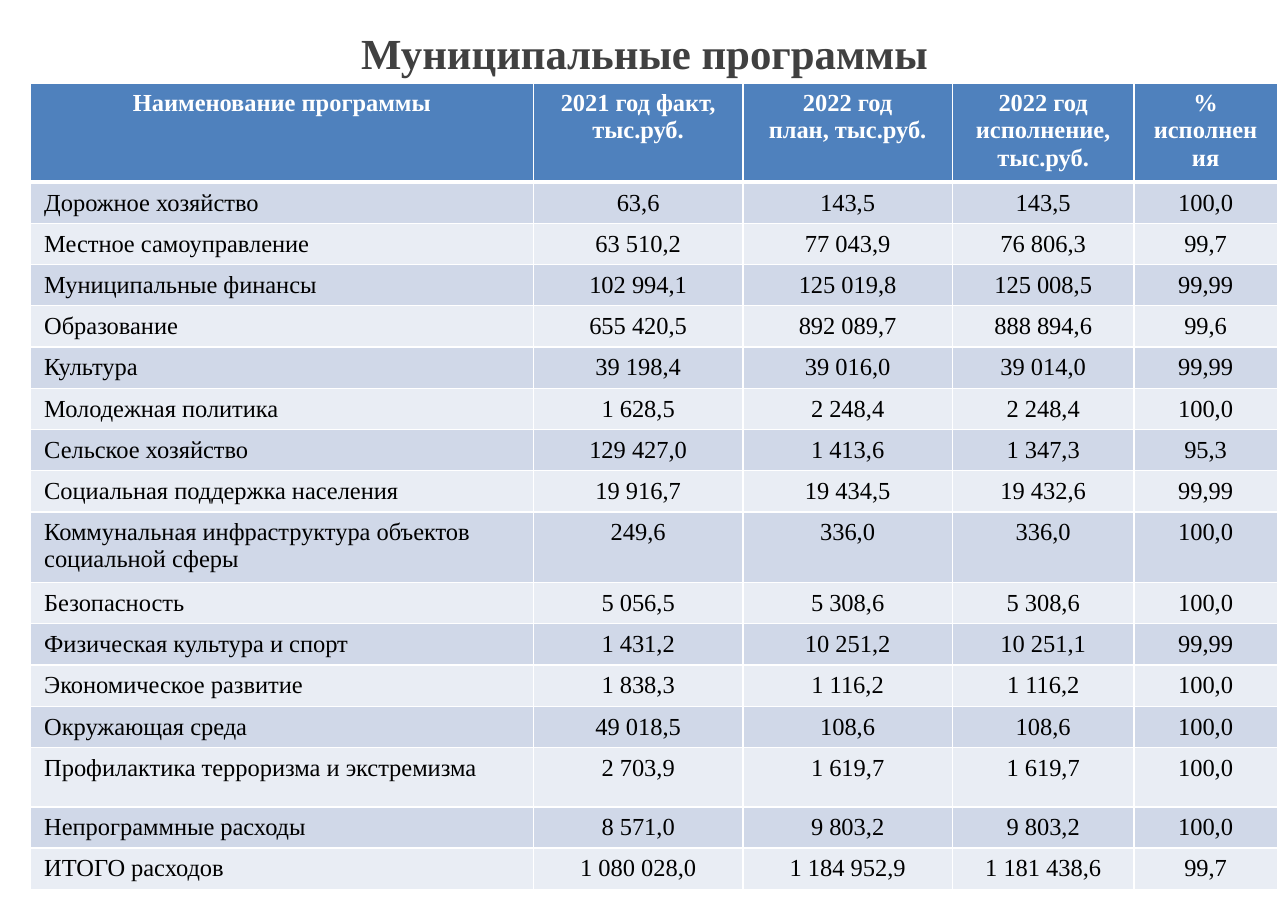
from pptx import Presentation
from pptx.dml.color import RGBColor
from pptx.enum.text import MSO_ANCHOR, PP_ALIGN
from pptx.oxml import parse_xml
from pptx.oxml.ns import nsdecls
from pptx.util import Cm, Pt

HUES = {
    "title": "404040",
    "head": "4F81BD",
    "odd": "D0D8E8",
    "even": "E9EDF4",
    "line": "FFFFFF",
    "light": "FFFFFF",
    "dark": "000000",
}
FONT = "Times New Roman"
WIDTHS = [11.6, 4.83, 4.83, 4.19, 3.3]
TALL = {0: 2.29, 9: 1.63, 14: 1.37}
ROWS = [
    ["Наименование программы", "2021 год факт, тыс.руб.", "2022 год\nплан, тыс.руб.",
     "2022 год\nисполнение, тыс.руб.", "% исполнения"],
    ["Дорожное хозяйство", "63,6", "143,5", "143,5", "100,0"],
    ["Местное самоуправление", "63 510,2", "77 043,9", "76 806,3", "99,7"],
    ["Муниципальные финансы", "102 994,1", "125 019,8", "125 008,5", "99,99"],
    ["Образование", "655 420,5", "892 089,7", "888 894,6", "99,6"],
    ["Культура", "39 198,4", "39 016,0", "39 014,0", "99,99"],
    ["Молодежная политика", "1 628,5", "2 248,4", "2 248,4", "100,0"],
    ["Сельское хозяйство", "129 427,0", "1 413,6", "1 347,3", "95,3"],
    ["Социальная поддержка населения", "19 916,7", "19 434,5", "19 432,6", "99,99"],
    ["Коммунальная инфраструктура объектов социальной сферы", "249,6", "336,0", "336,0", "100,0"],
    ["Безопасность", "5 056,5", "5 308,6", "5 308,6", "100,0"],
    ["Физическая культура и спорт", "1 431,2", "10 251,2", "10 251,1", "99,99"],
    ["Экономическое развитие", "1 838,3", "1 116,2", "1 116,2", "100,0"],
    ["Окружающая среда", "49 018,5", "108,6", "108,6", "100,0"],
    ["Профилактика терроризма и экстремизма", "2 703,9", "1 619,7", "1 619,7", "100,0"],
    ["Непрограммные расходы", "8 571,0", "9 803,2", "9 803,2", "100,0"],
    ["ИТОГО расходов", "1 080 028,0", "1 184 952,9", "1 181 438,6", "99,7"],
]


def add_text(para, text, size, hue, bold, align):
    para.alignment = align
    run = para.add_run()
    run.text = text
    run.font.name = FONT
    run.font.size = Pt(size)
    run.font.bold = bold
    run.font.color.rgb = RGBColor.from_string(HUES[hue])


def add_edge(cell, side, width):
    cell._tc.get_or_add_tcPr().append(parse_xml(
        f'<a:ln{side} {nsdecls("a")} w="{Pt(width)}"><a:solidFill>'
        f'<a:srgbClr val="{HUES["line"]}"/></a:solidFill></a:ln{side}>'))


deck = Presentation()
deck.slide_width, deck.slide_height = Cm(29.7), Cm(21)
slide = deck.slides.add_slide(deck.slide_layouts[5])

title = slide.shapes.title
title.left, title.top, title.width, title.height = Cm(0.76), Cm(0.33), Cm(28.2), Cm(1.75)
title.text_frame.vertical_anchor = MSO_ANCHOR.MIDDLE
add_text(title.text_frame.paragraphs[0], "Муниципальные программы", 28, "title", True, PP_ALIGN.CENTER)

heights = [TALL.get(r, 0.95) for r in range(len(ROWS))]
table = slide.shapes.add_table(len(ROWS), len(WIDTHS), Cm(0.7), Cm(1.91),
                               Cm(sum(WIDTHS)), Cm(sum(heights))).table
for col, width in zip(table.columns, WIDTHS):
    col.width = Cm(width)

for r, row in enumerate(ROWS):
    table.rows[r].height = Cm(heights[r])
    head = r == 0
    fill = "head" if head else "odd" if r % 2 else "even"
    for c, text in enumerate(row):
        cell = table.cell(r, c)
        cell.margin_left = cell.margin_right = Cm(0.32)
        cell.margin_top = cell.margin_bottom = Cm(0.16)
        for side in "LRTB":
            thick = (r, side) in [(0, "B"), (1, "T")]
            add_edge(cell, side, 3 if thick else 1)
        cell.fill.solid()
        cell.fill.fore_color.rgb = RGBColor.from_string(HUES[fill])
        align = PP_ALIGN.CENTER if head or c else PP_ALIGN.LEFT
        frame = cell.text_frame
        for n, line in enumerate(text.split("\n")):
            para = frame.add_paragraph() if n else frame.paragraphs[0]
            add_text(para, line, 16, "light" if head else "dark", head, align)

table.cell(len(ROWS) - 1, 0).vertical_anchor = MSO_ANCHOR.MIDDLE

deck.save("out.pptx")
